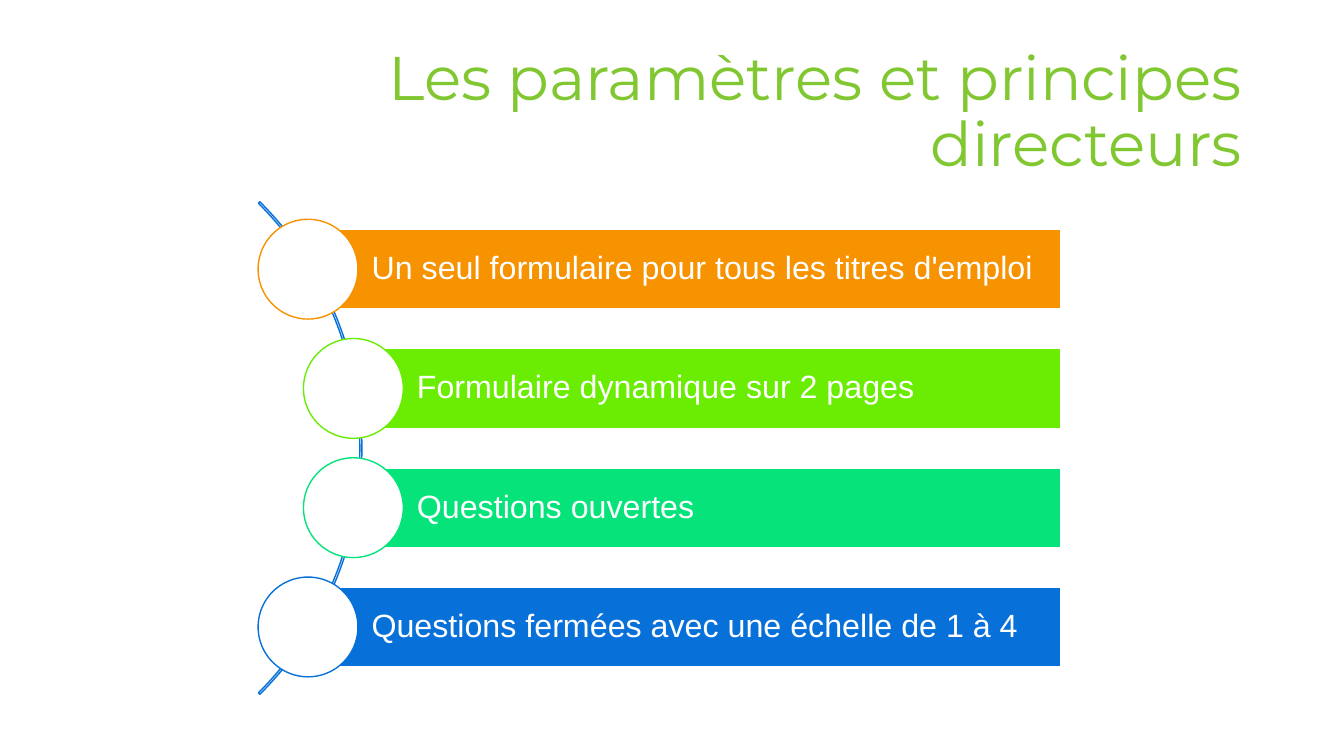
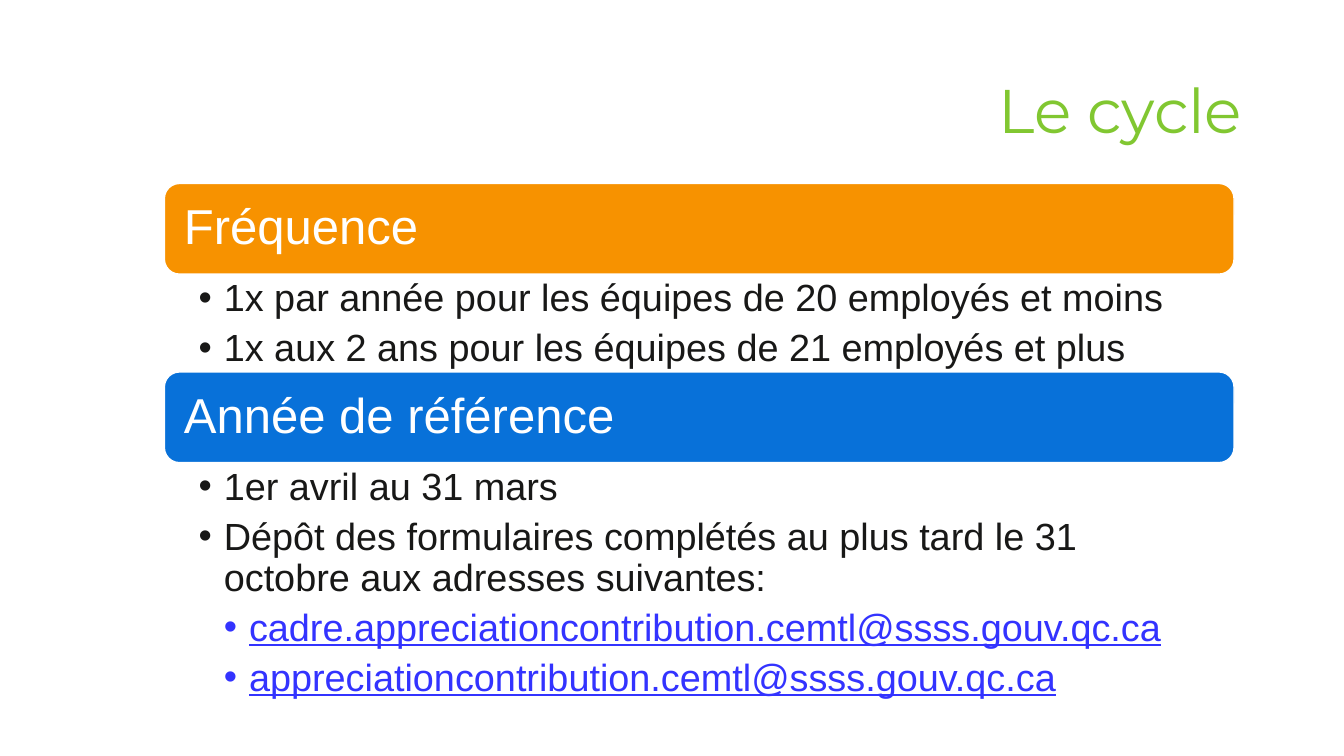
from dataclasses import dataclass
from typing import NamedTuple

from lxml.etree import SubElement
from pptx import Presentation
from pptx.dml.color import RGBColor as Color
from pptx.enum.shapes import MSO_SHAPE as Preset
from pptx.enum.text import MSO_ANCHOR as Anchor
from pptx.enum.text import PP_ALIGN as Align
from pptx.oxml.ns import qn
from pptx.util import Pt

EMU_PER_PX = 9144


@dataclass(frozen=True)
class Theme:
    white: str = "FFFFFF"
    ink: str = "181817"
    title: str = "81C731"
    link: str = "3333FF"
    orange: str = "F79200"
    lime: str = "6AED03"
    mint: str = "06E37B"
    blue: str = "0871D9"
    title_font: str = "Montserrat"
    body_font: str = "Arial"
    title_size: int = 44
    heading_size: int = 35
    bullet_size: int = 27
    bar_size: int = 23
    line_width: int = 1
    line_spacing: float = 0.9
    bullet_gap: float = 6.5


class Box(NamedTuple):
    left: int
    top: int
    width: int
    height: int


class Bullet(NamedTuple):
    text: str
    level: int = 1
    color: str = Theme.ink
    underline: bool = False


THEME = Theme()
PAGE_WIDTH, PAGE_HEIGHT = 1333, 750
TITLE_BOX = Box(194, 40, 1048, 145)


def px(length):
    return round(length * EMU_PER_PX)


def emu(box):
    return [px(length) for length in box]


def add_text(frame, text, *, size, color, font=THEME.body_font, align=Align.LEFT,
             underline=False, level=0, bullet=False, gap=0, first=True):
    para = frame.paragraphs[0] if first else frame.add_paragraph()
    para.alignment = align
    if bullet:
        para.level = level
        properties = para._p.get_or_add_pPr()
        properties.set("marL", str(px(25 * level)))
        properties.set("indent", str(px(-25)))
        SubElement(properties, qn("a:buFont"), typeface=font)
        SubElement(properties, qn("a:buChar"), char="•")
    para.line_spacing = THEME.line_spacing
    para.space_after = Pt(gap)
    span = para.add_run()
    span.text = text
    span.font.name = font
    span.font.size = Pt(size)
    span.font.color.rgb = Color.from_string(color)
    if underline:
        span.font.underline = True


def set_frame(frame, anchor, insets):
    frame.word_wrap = True
    frame.vertical_anchor = anchor
    (frame.margin_left, frame.margin_top,
     frame.margin_right, frame.margin_bottom) = emu(insets)
    return frame


def add_text_box(page, box, anchor, insets):
    return set_frame(page.shapes.add_textbox(*emu(box)).text_frame, anchor, insets)


def add_preset(page, preset, box, fill, line):
    shape = page.shapes.add_shape(preset, *emu(box))
    shape.shadow.inherit = False
    if fill:
        shape.fill.solid()
        shape.fill.fore_color.rgb = Color.from_string(fill)
    else:
        shape.fill.background()
    shape.line.color.rgb = Color.from_string(line)
    shape.line.width = Pt(THEME.line_width)
    return shape


def add_page(deck, title):
    page = deck.slides.add_slide(deck.slide_layouts[6])
    frame = add_text_box(page, TITLE_BOX, Anchor.MIDDLE, (10, 5, 10, 5))
    add_text(frame, title, size=THEME.title_size, color=THEME.title,
             font=THEME.title_font, align=Align.RIGHT)
    return page


def add_curved_list(page, box, items):
    arc_size, bar_height, circle_size = 691, 79, 99
    middle = box.top + box.height / 2
    pitch = box.height * 0.24
    arc_box = Box(box.left + 103 - arc_size, middle - arc_size / 2, arc_size, arc_size)
    arc = add_preset(page, Preset.BLOCK_ARC, arc_box, None, THEME.blue)
    for index, value in enumerate((189, 27, 0.003)):
        arc.adjustments[index] = value
    for index, (text, color, shift) in enumerate(items):
        center_x = box.left + circle_size / 2 + shift
        center_y = middle + (index - (len(items) - 1) / 2) * pitch
        bar_box = Box(center_x, center_y - bar_height / 2,
                      box.left + box.width - center_x, bar_height)
        bar = add_preset(page, Preset.RECTANGLE, bar_box, color, THEME.white)
        frame = set_frame(bar.text_frame, Anchor.MIDDLE, (63, 6, 6, 6))
        add_text(frame, text, size=THEME.bar_size, color=THEME.white)
        circle_box = Box(center_x - circle_size / 2, center_y - circle_size / 2,
                         circle_size, circle_size)
        add_preset(page, Preset.OVAL, circle_box, THEME.white, color)


def add_sections(page, box, sections):
    heading_height = 90
    top = box.top
    for heading, color, body_height, bullets in sections:
        heading_box = Box(box.left, top, box.width, heading_height)
        banner = add_preset(page, Preset.ROUNDED_RECTANGLE, heading_box, color, THEME.white)
        frame = set_frame(banner.text_frame, Anchor.MIDDLE, (15, 15, 15, 15))
        add_text(frame, heading, size=THEME.heading_size, color=THEME.white)
        body_box = Box(box.left, top + heading_height, box.width, body_height)
        frame = add_text_box(page, body_box, Anchor.TOP, (34, 5, 27, 5))
        for index, item in enumerate(bullets):
            add_text(frame, item.text, size=THEME.bullet_size, color=item.color,
                     underline=item.underline, level=item.level, bullet=True,
                     gap=THEME.bullet_gap, first=index == 0)
        top += heading_height + body_height


def build_principles(deck):
    page = add_page(deck, "Les paramètres et principes directeurs")
    add_curved_list(page, Box(256, 198, 796, 493), (
        ("Un seul formulaire pour tous les titres d'emploi", THEME.orange, 0),
        ("Formulaire dynamique sur 2 pages", THEME.lime, 45),
        ("Questions ouvertes", THEME.mint, 45),
        ("Questions fermées avec une échelle de 1 à 4", THEME.blue, 0),
    ))


def build_cycle(deck):
    page = add_page(deck, "Le cycle")
    add_sections(page, Box(163, 182, 1061, 506), (
        ("Fréquence", THEME.orange, 97, (
            Bullet("1x par année pour les équipes de 20 employés et moins"),
            Bullet("1x aux 2 ans pour les équipes de 21 employés et plus"),
        )),
        ("Année de référence", THEME.blue, 230, (
            Bullet("1er avril au 31 mars"),
            Bullet("Dépôt des formulaires complétés au plus tard le 31 octobre "
                   "aux adresses suivantes:"),
            Bullet("cadre.appreciationcontribution.cemtl@ssss.gouv.qc.ca",
                   2, THEME.link, True),
            Bullet("appreciationcontribution.cemtl@ssss.gouv.qc.ca",
                   2, THEME.link, True),
        )),
    ))


def main():
    deck = Presentation()
    deck.slide_width, deck.slide_height = px(PAGE_WIDTH), px(PAGE_HEIGHT)
    build_principles(deck)
    build_cycle(deck)
    deck.save("out.pptx")


if __name__ == "__main__":
    main()
